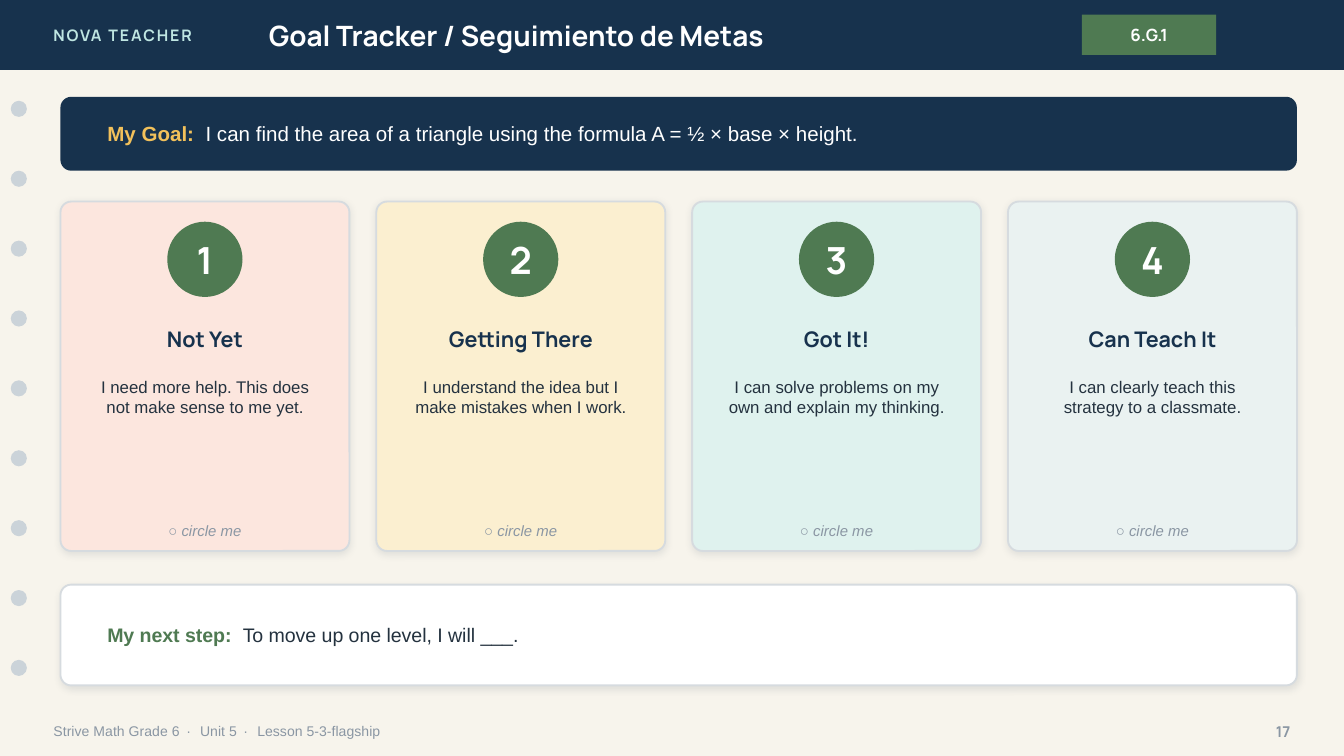
from lxml import etree
from pptx import Presentation
from pptx.dml.color import RGBColor
from pptx.enum.shapes import MSO_SHAPE as Shape
from pptx.enum.text import MSO_ANCHOR as Anchor, MSO_AUTO_SIZE as AutoSize, PP_ALIGN as Align
from pptx.oxml.ns import qn
from pptx.util import Inches, Pt

NAVY = RGBColor(0x17, 0x32, 0x4D)
GREEN = RGBColor(0x4F, 0x7A, 0x52)
GOLD = RGBColor(0xF2, 0xC1, 0x5B)
AQUA = RGBColor(0xBF, 0xE6, 0xE2)
CREAM = RGBColor(0xF7, 0xF4, 0xEC)
WHITE = RGBColor(0xFF, 0xFF, 0xFF)
INK = RGBColor(0x24, 0x32, 0x3F)
GRAY = RGBColor(0x8A, 0x96, 0xA3)
DOT = RGBColor(0xCB, 0xD3, 0xD9)
BORDER = RGBColor(0xD6, 0xDB, 0xDF)
SHADOW = RGBColor(0x1C, 0x2E, 0x42)
PEACH = RGBColor(0xFC, 0xE6, 0xDE)
YELLOW = RGBColor(0xFB, 0xEF, 0xD0)
MINT = RGBColor(0xDF, 0xF2, 0xEE)
MIST = RGBColor(0xEA, 0xF2, 0xF1)

HEADING, BODY = "Manrope", "Arial"
RADIUS = 0.08

LEVELS = [
    ("Not Yet", "I need more help. This does not make sense to me yet.", PEACH),
    ("Getting There", "I understand the idea but I make mistakes when I work.", YELLOW),
    ("Got It!", "I can solve problems on my own and explain my thinking.", MINT),
    ("Can Teach It", "I can clearly teach this strategy to a classmate.", MIST),
]


def add_span(para, text, size, color, font=BODY, bold=False, italic=False, spacing=0):
    span = para.add_run()
    span.text = text
    span.font.size, span.font.name = Pt(size), font
    span.font.bold, span.font.italic = bold, italic
    span.font.color.rgb = color
    if spacing:
        span.font._element.set("spc", str(int(spacing * 100)))


def prepare(shape, align=Align.LEFT, anchor=Anchor.MIDDLE):
    """Set up a shape's text frame and return its first paragraph."""
    frame = shape.text_frame
    frame.word_wrap = True
    frame.auto_size = AutoSize.NONE
    frame.vertical_anchor = anchor
    para = frame.paragraphs[0]
    para.alignment = align
    return para


def add_text(page, left, top, width, height, align=Align.LEFT, anchor=Anchor.MIDDLE):
    box = page.shapes.add_textbox(Inches(left), Inches(top), Inches(width), Inches(height))
    return prepare(box, align, anchor)


def add_block(page, kind, left, top, width, height, fill):
    block = page.shapes.add_shape(kind, Inches(left), Inches(top), Inches(width), Inches(height))
    block.shadow.inherit = False
    block.fill.solid()
    block.fill.fore_color.rgb = fill
    block.line.fill.background()
    if kind == Shape.ROUNDED_RECTANGLE:
        block.adjustments[0] = RADIUS / min(width, height)
    return block


def add_raised_panel(page, left, top, width, height, fill):
    """Add a rounded panel with a thin border and a soft shadow."""
    panel = add_block(page, Shape.ROUNDED_RECTANGLE, left, top, width, height, fill)
    panel.line.color.rgb = BORDER
    panel.line.width = Pt(1)
    effects = panel._element.spPr.find(qn("a:effectLst"))
    shadow = etree.SubElement(effects, qn("a:outerShdw"), blurRad=str(Pt(4)), dist=str(Pt(1)),
                              dir="5400000", algn="bl", rotWithShape="0")
    color = etree.SubElement(shadow, qn("a:srgbClr"), val=str(SHADOW))
    etree.SubElement(color, qn("a:alpha"), val="10000")


def add_labelled_line(page, left, top, width, height, label, text, size, label_color, color):
    inset = 0.25
    para = add_text(page, left + inset, top, width - 2 * inset, height)
    add_span(para, label, size, label_color, bold=True)
    add_span(para, " ", size, color, spacing=3)
    add_span(para, text, size, color)


def add_header(page, left, top, width, height):
    add_block(page, Shape.RECTANGLE, left, top, width, height, NAVY)
    para = add_text(page, left + 0.3, top, 2.4, height)
    add_span(para, "NOVA TEACHER", 8.5, AQUA, HEADING, bold=True, spacing=1)

    # Title, raised above the bar
    title = page.shapes.title
    title.left, title.top = Inches(left + 1.9), Inches(top)
    title.width, title.height = Inches(5.6), Inches(height)
    page.shapes._spTree.append(title._element)
    add_span(prepare(title), "Goal Tracker / Seguimiento de Metas", 15, WHITE, HEADING, bold=True)

    # Standard code
    badge = add_block(page, Shape.RECTANGLE, left + 8.05, top + 0.11, 1, 0.3, GREEN)
    add_span(prepare(badge, Align.CENTER), "6.G.1", 9, WHITE, HEADING, bold=True)


def add_binder_holes(page, left, top, size, pitch, count):
    for index in range(count):
        add_block(page, Shape.OVAL, left, top + index * pitch, size, size, DOT)


def add_footer(page, left, top, width, height):
    para = add_text(page, left, top, 7, height)
    for index, part in enumerate(["Strive Math Grade 6", "Unit 5", "Lesson 5-3-flagship"]):
        if index:
            add_span(para, " · ", 7.5, GRAY, spacing=1.4)
        add_span(para, part, 7.5, GRAY)
    para = add_text(page, left + width - 0.5, top, 0.5, height, Align.RIGHT)
    add_span(para, "17", 8, GRAY, HEADING, bold=True)


def add_goal(page, left, top, width, height):
    add_block(page, Shape.ROUNDED_RECTANGLE, left, top, width, height, NAVY)
    add_labelled_line(page, left, top, width, height, "My Goal:",
                      "I can find the area of a triangle using the formula A = ½ × base × height.",
                      11, GOLD, WHITE)


def add_level_card(page, left, top, width, height, number, name, description, fill):
    add_raised_panel(page, left, top, width, height, fill)

    # Numbered circle
    size = 0.56
    circle = (left + (width - size) / 2, top + 0.15, size, size)
    add_block(page, Shape.OVAL, *circle, GREEN)
    para = add_text(page, *circle, Align.CENTER)
    add_span(para, str(number), 20, WHITE, HEADING, bold=True)

    # Name, description and prompt
    para = add_text(page, left + 0.05, top + 0.85, width - 0.1, 0.35, Align.CENTER)
    add_span(para, name, 11.5, NAVY, HEADING, bold=True)
    para = add_text(page, left + 0.12, top + 1.25, width - 0.24, 1.15, Align.CENTER, Anchor.TOP)
    add_span(para, description, 9, INK)
    para = add_text(page, left + 0.05, top + height - 0.25, width - 0.1, 0.2, Align.CENTER)
    add_span(para, "○ circle me", 8, GRAY, italic=True)


def add_levels(page, left, top, width, height):
    gap = 0.2
    card_width = (width - gap * (len(LEVELS) - 1)) / len(LEVELS)
    for index, (name, description, fill) in enumerate(LEVELS):
        add_level_card(page, left + index * (card_width + gap), top, card_width, height,
                       index + 1, name, description, fill)


def add_next_step(page, left, top, width, height):
    add_raised_panel(page, left, top, width, height, WHITE)
    add_labelled_line(page, left, top, width, height, "My next step:",
                      "To move up one level, I will ___.", 10.5, GREEN, INK)


def main():
    deck = Presentation()
    deck.slide_width, deck.slide_height = Inches(10), Inches(10 * 9 / 16)
    page = deck.slides.add_slide(deck.slide_layouts[5])
    page.background.fill.solid()
    page.background.fill.fore_color.rgb = CREAM

    left, width = 0.45, 9.2
    add_header(page, 0, 0, 10, 0.52)
    add_binder_holes(page, 0.08, 0.75, 0.12, 0.52, 9)
    add_footer(page, 0.3, 5.3, 9.4, 0.28)
    add_goal(page, left, 0.72, width, 0.55)
    add_levels(page, left, 1.5, width, 2.6)
    add_next_step(page, left, 4.35, width, 0.75)
    deck.save("out.pptx")


if __name__ == "__main__":
    main()
